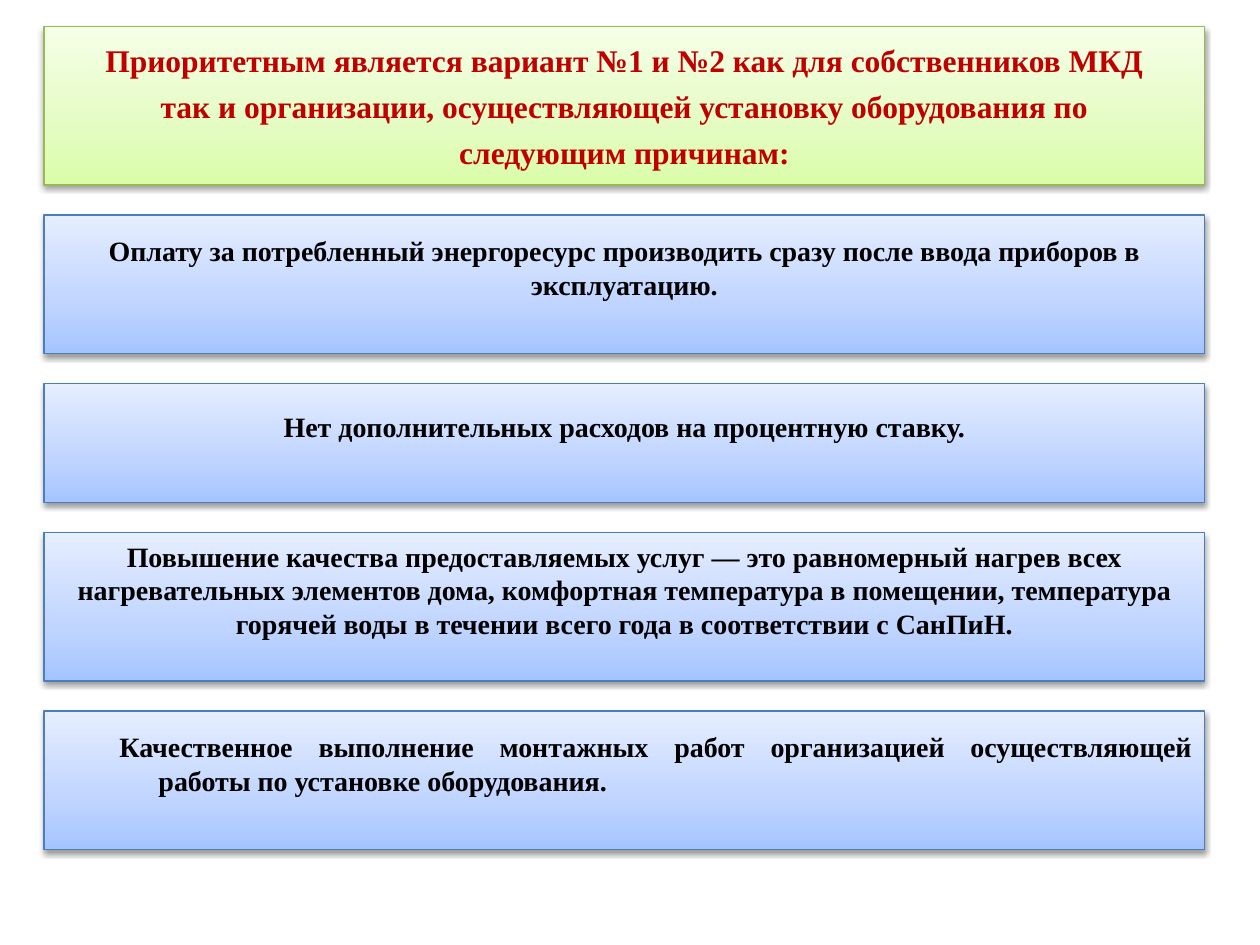
import copy
import pptx
import pptx.dml.color
import pptx.enum.shapes
import pptx.enum.text
import pptx.util
from lxml import etree

ROW = pptx.util.Cm(0.2)
GAP_ROWS = 3
WIDTH_ROWS = 117
LEFT, TOP = pptx.util.Inches(0.35), pptx.util.Inches(0.21)
GREEN = ("DAFDA7", "E4FCC2", "F5FFE7"), "98B955"
BLUE = ("A4C4FF", "BFD4FF", "E6EEFF"), "4B7EBC"
ALIGN = pptx.enum.text.PP_ALIGN
TITLE = (
    "Приоритетным является вариант №1 и №2 как для собственников МКД",
    "так и организации, осуществляющей установку оборудования по",
    "следующим причинам:",
)
REASONS = (
    (14, "Оплату за потребленный энергоресурс производить сразу после ввода "
         "приборов в эксплуатацию."),
    (12, "Нет дополнительных расходов на процентную ставку."),
    (15, "Повышение качества предоставляемых услуг — это равномерный нагрев всех "
         "нагревательных элементов дома, комфортная температура в помещении, "
         "температура горячей воды в течении всего года в соответствии с СанПиН."),
    (14, "Качественное выполнение монтажных работ организацией осуществляющей "
         "работы по установке оборудования."),
)
SHADOW = (
    '<a:effectLst xmlns:a="http://schemas.openxmlformats.org/drawingml/2006/main">'
    '<a:outerShdw blurRad="39370" dist="20320" dir="5400000" rotWithShape="0">'
    '<a:srgbClr val="000000"><a:alpha val="38000"/></a:srgbClr>'
    '</a:outerShdw></a:effectLst>'
)


def rgb(code):
    return pptx.dml.color.RGBColor.from_string(code)


def set_gradient(fill, codes):
    fill.gradient()
    fill.gradient_angle = 90
    stops = fill._fill._gradFill.gsLst
    stops.insert(1, copy.deepcopy(stops[0]))
    for stop, code, position in zip(fill.gradient_stops, codes, (0, 0.35, 1)):
        stop.color.rgb = rgb(code)
        stop.position = position


def add_panel(slide, row, rows, palette):
    codes, line = palette
    sp = slide.shapes.add_shape(
        pptx.enum.shapes.MSO_SHAPE.RECTANGLE,
        LEFT, TOP + row * ROW, WIDTH_ROWS * ROW, rows * ROW)
    set_gradient(sp.fill, codes)
    sp.line.color.rgb = rgb(line)
    sp.line.width = pptx.util.Pt(0.75)
    sp._element.spPr.append(etree.fromstring(SHADOW))
    return sp


def set_text(sp, lines, size, color, bottom=0.05):
    tf = sp.text_frame
    tf.word_wrap = True
    tf.vertical_anchor = pptx.enum.text.MSO_ANCHOR.MIDDLE
    tf.margin_bottom = pptx.util.Inches(bottom)
    tf.text = "\n".join(lines)
    for i, p in enumerate(tf.paragraphs):
        p.alignment = ALIGN.CENTER
        p.space_before = pptx.util.Pt(4.75 if i else 0)
        for r in p.runs:
            r.font.name = "Times New Roman"
            r.font.size = pptx.util.Pt(size)
            r.font.bold = True
            r.font.color.rgb = rgb(color)
    return tf


def justify_hanging(p):
    p.alignment = ALIGN.JUSTIFY
    pPr = p._p.get_or_add_pPr()
    pPr.set("marL", str(pptx.util.Inches(0.81)))
    pPr.set("indent", str(pptx.util.Inches(-0.31)))


def main():
    prs = pptx.Presentation()
    prs.slide_width, prs.slide_height = pptx.util.Inches(10), pptx.util.Inches(7.5)
    slide = prs.slides.add_slide(prs.slide_layouts[6])
    title_rows = 16
    set_text(add_panel(slide, 0, title_rows, GREEN), TITLE, 18, "C00000")
    row = title_rows + GAP_ROWS
    for rows, text in REASONS:
        sp = add_panel(slide, row, rows, BLUE)
        tf = set_text(sp, [text], 16, "000000", 0.32)
        row += rows + GAP_ROWS
    justify_hanging(tf.paragraphs[0])
    prs.save("out.pptx")


if __name__ == "__main__":
    main()
